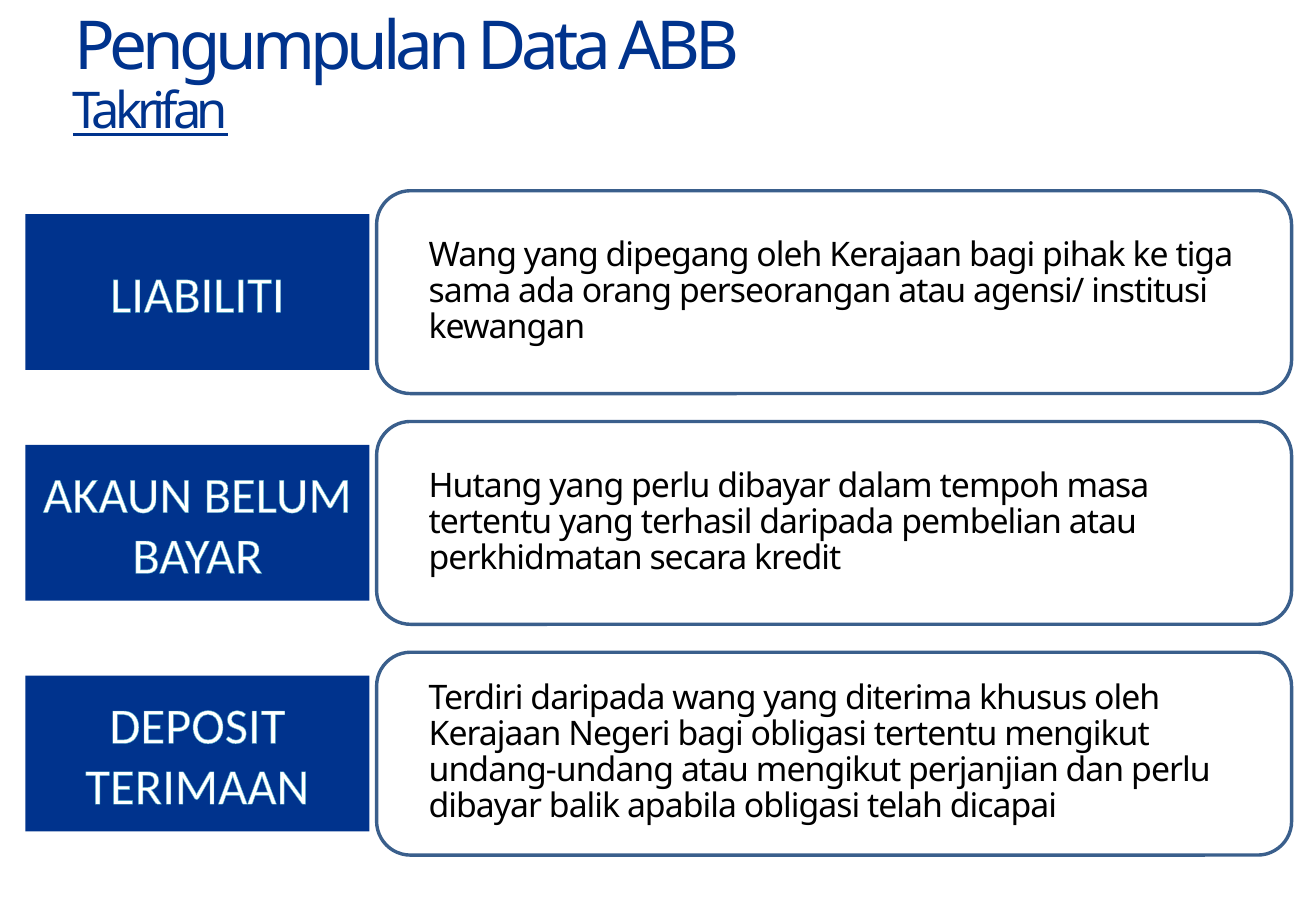
from lxml.etree import SubElement
from pptx import Presentation
from pptx.dml.color import RGBColor as RGB
from pptx.enum.shapes import MSO_SHAPE as SHAPE
from pptx.enum.text import MSO_ANCHOR as ANCHOR, MSO_AUTO_SIZE as AUTO, PP_ALIGN as ALIGN
from pptx.oxml.ns import qn
from pptx.util import Inches, Pt

COLORS = {"navy": "00338D", "border": "3A5F8C", "white": "FFFFFF",
          "black": "000000", "glow": "4BACC6"}
FIRST_CENTER, ROW_PITCH = 32.07, 25.33

DEFINITIONS = [
    ("LIABILITI", 3,
     "Wang yang dipegang oleh Kerajaan bagi pihak ke tiga sama ada orang "
     "perseorangan atau agensi/ institusi kewangan"),
    ("AKAUN BELUM BAYAR", 3,
     "Hutang yang perlu dibayar dalam tempoh masa tertentu yang terhasil "
     "daripada pembelian atau perkhidmatan secara kredit"),
    ("DEPOSIT TERIMAAN", 4,
     "Terdiri daripada wang yang diterima khusus oleh Kerajaan Negeri bagi "
     "obligasi tertentu mengikut undang-undang atau mengikut perjanjian dan "
     "perlu dibayar balik apabila obligasi telah dicapai"),
]


class DefinitionSlide:
    """Draws styled elements on one slide, with lengths in percent of its size."""

    def __init__(self, prs):
        self.width, self.height = prs.slide_width, prs.slide_height
        self.s = prs.slides.add_slide(prs.slide_layouts[6])

    def box(self, x, y, w, h):
        return (int(self.width * x / 100), int(self.height * y / 100),
                int(self.width * w / 100), int(self.height * h / 100))

    def style(self, tf, text, size, color, name="Noto Sans", spacing=0):
        tf.word_wrap = True
        p = tf.paragraphs[0]
        p.text = text
        p.font.size, p.font.name = Pt(size), name
        p.font.color.rgb = RGB.from_string(COLORS[color])
        if spacing:
            p._p.pPr.find(qn("a:defRPr")).set("spc", str(int(spacing * 100)))
        return p

    def text(self, box, text, size, color, spacing, indent=0):
        tf = self.s.shapes.add_textbox(*self.box(*box)).text_frame
        p = self.style(tf, text, size, color, spacing=spacing)
        tf.auto_size = AUTO.SHAPE_TO_FIT_TEXT
        p._p.pPr.set("marL", str(Inches(indent)))
        p._p.pPr.set("indent", "0")
        return tf, p

    def heading(self, box, text, size, before, underline=False, indent=0):
        tf, p = self.text(box, text, size, "navy", -3, indent)
        tf.margin_left = tf.margin_right = tf.margin_bottom = 0
        tf.margin_top = Inches(0.01)
        p.space_before = Pt(before)
        p.font.underline = underline

    def shape(self, kind, box):
        sp = self.s.shapes.add_shape(kind, *self.box(*box))
        sp.shadow.inherit = False
        return sp

    def card(self, center):
        sp = self.shape(SHAPE.ROUNDED_RECTANGLE, (28.62, center - 11.13, 69.53, 22.27))
        sp.fill.background()
        sp.line.color.rgb = RGB.from_string(COLORS["border"])
        sp.line.width = Pt(2)

    def label(self, center, text):
        sp = self.shape(SHAPE.RECTANGLE, (1.94, center - 8.55, 26.13, 17.1))
        sp.fill.solid()
        sp.fill.fore_color.rgb = RGB.from_string(COLORS["navy"])
        sp.line.fill.background()
        tf = sp.text_frame
        tf.margin_left = tf.margin_right = tf.margin_top = tf.margin_bottom = 0
        tf.vertical_anchor = ANCHOR.MIDDLE
        p = self.style(tf, text, 30, "white", "Calibri")
        p.alignment = ALIGN.CENTER
        props = p.runs[0]._r.get_or_add_rPr()
        ln = SubElement(props, qn("a:ln"), w=str(Pt(0.8)))
        fill = SubElement(ln, qn("a:solidFill"))
        SubElement(fill, qn("a:srgbClr"), val=COLORS["glow"])

    def definition(self, center, lines, text):
        h = 1.33 + 4 * lines
        _, p = self.text((31.02, center - h / 2, 65, h), text, 20, "black", -0.6, 0.07)
        p.line_spacing = 0.89


def main():
    prs = Presentation()
    prs.slide_width, prs.slide_height = Inches(10.83), Inches(7.5)
    slide = DefinitionSlide(prs)
    slide.heading((5.54, 0.13, 74.79, 9.2), "Pengumpulan Data ABB", 40, 1, indent=0.01)
    slide.heading((5.54, 8.4, 87.35, 6.93), "Takrifan", 30, 0.5, underline=True)
    for i, (term, lines, meaning) in enumerate(DEFINITIONS):
        center = FIRST_CENTER + i * ROW_PITCH
        slide.card(center)
        slide.label(center, term)
        slide.definition(center, lines, meaning)
    prs.save("out.pptx")


if __name__ == "__main__":
    main()
